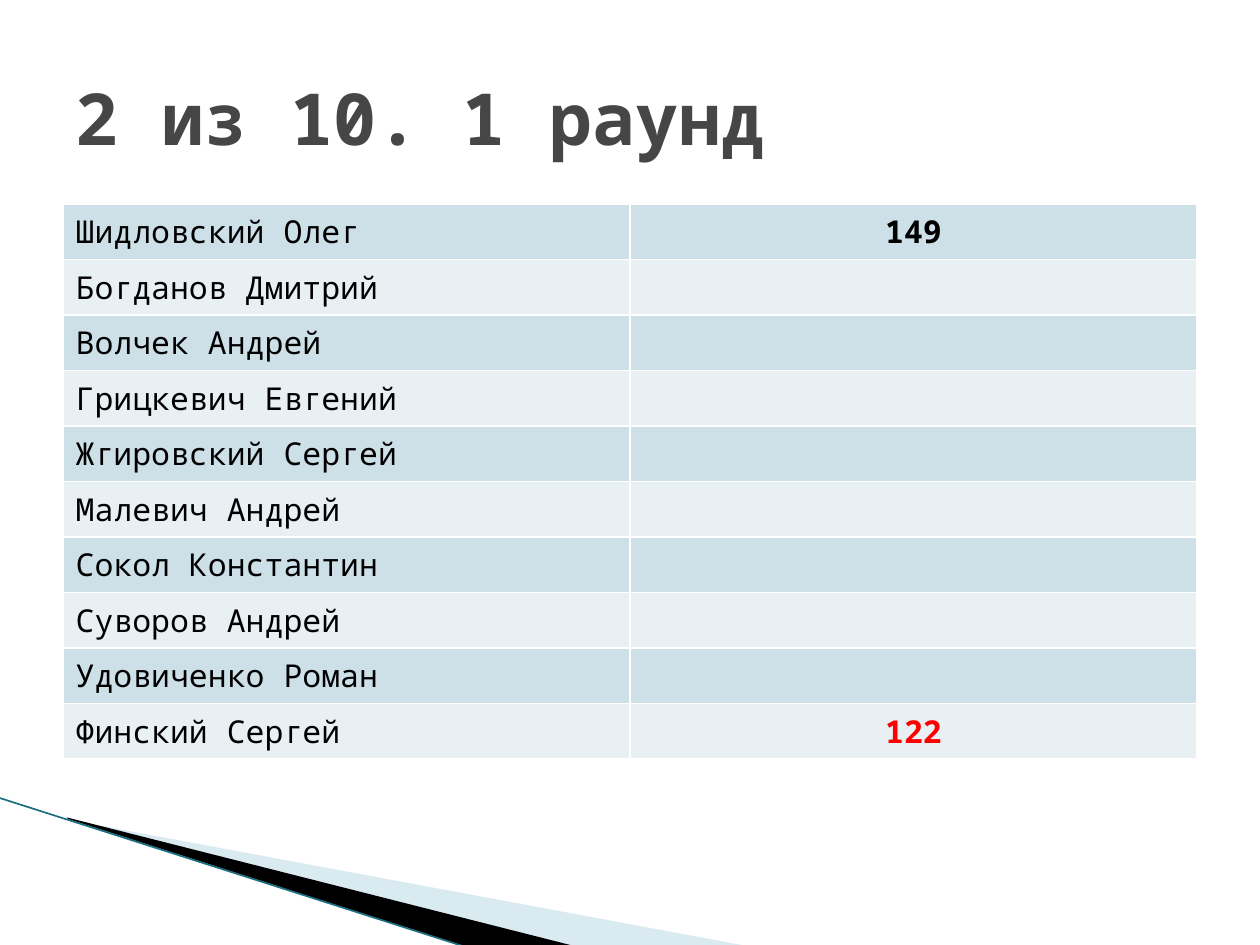
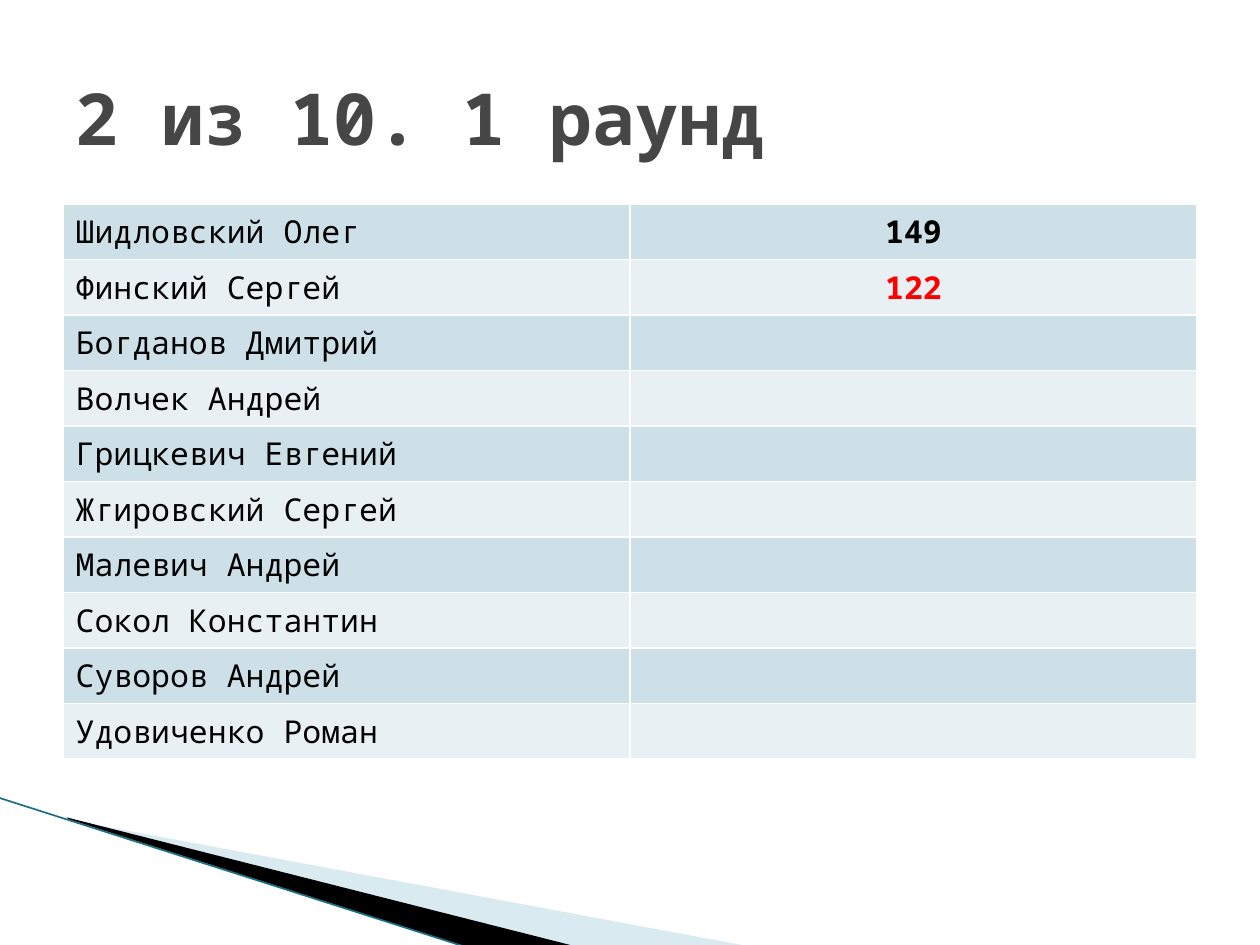
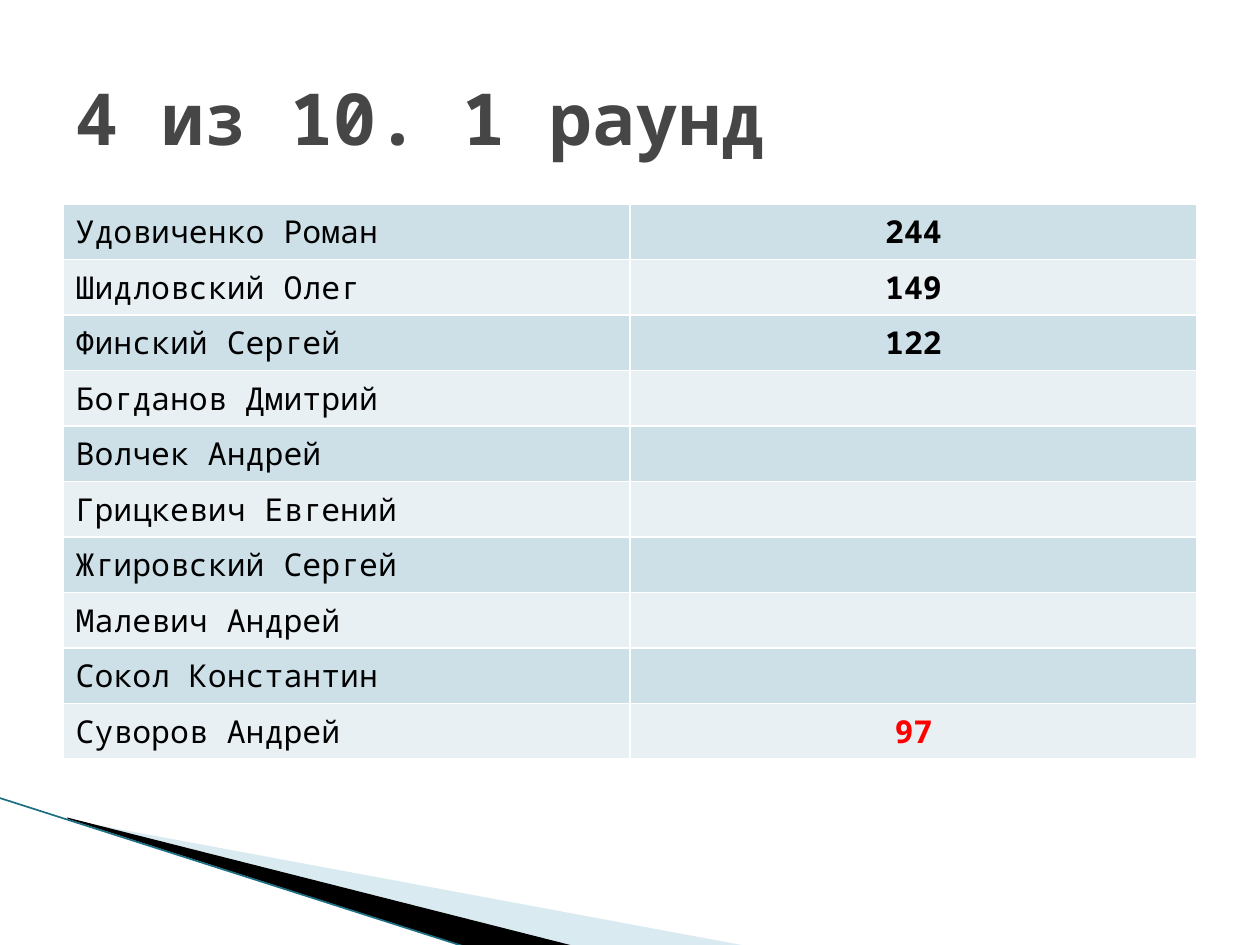
from lxml.etree import SubElement
from pptx import Presentation
from pptx.dml.color import RGBColor
from pptx.enum.shapes import MSO_CONNECTOR
from pptx.enum.text import MSO_ANCHOR, PP_ALIGN
from pptx.oxml.ns import qn
from pptx.util import Cm, Pt

PLAYERS = [
    "Богданов Дмитрий",
    "Волчек Андрей",
    "Грицкевич Евгений",
    "Жгировский Сергей",
    "Малевич Андрей",
    "Сокол Константин",
    "Суворов Андрей",
    "Удовиченко Роман",
    "Финский Сергей",
    "Шидловский Олег",
]
SCORES = {
    "Удовиченко Роман": "244",
    "Шидловский Олег": "149",
    "Финский Сергей": "122",
    "Суворов Андрей": "97",
}
ROUNDS = [
    {"title": "2 из 10. 1 раунд", "leaders": ["Шидловский Олег"], "latest": "Финский Сергей"},
    {
        "title": "2 из 10. 1 раунд",
        "leaders": ["Шидловский Олег", "Финский Сергей"],
        "latest": "Финский Сергей",
    },
    {
        "title": "4 из 10. 1 раунд",
        "leaders": ["Удовиченко Роман", "Шидловский Олег", "Финский Сергей"],
        "latest": "Суворов Андрей",
    },
]

FONT = "Noto Sans Mono"
WHITE, BLACK, RED, TITLE_GREY = "FFFFFF", "000000", "FF0000", "464646"
BAND_FILLS = ["CDE0E8", "E8F0F4"]
PALE_BLUE, TEAL = "A0CBDC", "1B6F83"

LEFT, WIDTH = 1.27, 22.86
TITLE_TOP, TITLE_HEIGHT = 0.76, 3.18
TABLE_TOP, ROW_HEIGHT = 4.11, 1.03
PALE_WEDGE = [(1.4, 16.53), (15.11, 19.08), (11.58, 19.08), (1.4, 16.51)]
BLACK_WEDGE = [(1.35, 16.48), (11.61, 19.08), (9.45, 19.1), (1.37, 16.51)]
EDGE = [(-0.03, 16.08), (9.42, 19.1)]


def color(value):
    return RGBColor.from_string(value)


def write(text_frame, text, size=18, fill=BLACK, bold=False, align=PP_ALIGN.LEFT):
    paragraph = text_frame.paragraphs[0]
    paragraph.alignment = align
    run = paragraph.add_run()
    run.text = text
    run.font.name = FONT
    run.font.size = Pt(size)
    run.font.bold = bold
    run.font.color.rgb = color(fill)


def add_wedge(slide, points, fill, opacity=100):
    corners = [(Cm(x), Cm(y)) for x, y in points]
    builder = slide.shapes.build_freeform(*corners[0], scale=1.0)
    builder.add_line_segments(corners[1:], close=True)
    wedge = builder.convert_to_shape()
    wedge.shadow.inherit = False
    wedge.line.fill.background()
    wedge.fill.solid()
    wedge.fill.fore_color.rgb = color(fill)
    if opacity < 100:
        solid_color = wedge.element.spPr.find(qn("a:solidFill"))[0]
        SubElement(solid_color, qn("a:alpha"), val=str(opacity * 1000))
    return wedge


def add_edge(slide):
    (x1, y1), (x2, y2) = EDGE
    edge = slide.shapes.add_connector(MSO_CONNECTOR.STRAIGHT, Cm(x1), Cm(y1), Cm(x2), Cm(y2))
    edge.line.color.rgb = color(TEAL)
    edge.line.width = Pt(0.95)
    SubElement(edge.element.spPr, qn("a:effectLst"))
    return edge


def decorate_layout(layout, slide):
    decorations = [
        add_wedge(slide, PALE_WEDGE, PALE_BLUE, opacity=40),
        add_wedge(slide, BLACK_WEDGE, BLACK),
        add_edge(slide),
    ]
    for decoration in decorations:
        layout.shapes.element.append(decoration.element)


def add_title(slide, text):
    title = slide.shapes.title
    title.left, title.top = Cm(LEFT), Cm(TITLE_TOP)
    title.width, title.height = Cm(WIDTH), Cm(TITLE_HEIGHT)
    title.text_frame.vertical_anchor = MSO_ANCHOR.MIDDLE
    write(title.text_frame, text, size=41, fill=TITLE_GREY, bold=True)


def format_cell(cell, fill):
    properties = cell._tc.get_or_add_tcPr()
    for side in ("a:lnL", "a:lnR", "a:lnT", "a:lnB"):
        border = SubElement(properties, qn(side), w=str(Pt(1)))
        solid = SubElement(border, qn("a:solidFill"))
        SubElement(solid, qn("a:srgbClr"), val=WHITE)
    cell.fill.solid()
    cell.fill.fore_color.rgb = color(fill)


def add_standings(slide, leaders, latest):
    names = leaders + [name for name in PLAYERS if name not in leaders]
    frame = slide.shapes.add_table(
        len(names), 2, Cm(LEFT), Cm(TABLE_TOP), Cm(WIDTH), Cm(ROW_HEIGHT * len(names))
    )
    table = frame.table
    table.first_row = False
    table.horz_banding = False
    for index, name in enumerate(names):
        name_cell, score_cell = table.cell(index, 0), table.cell(index, 1)
        for cell in (name_cell, score_cell):
            format_cell(cell, BAND_FILLS[index % 2])
        write(name_cell.text_frame, name)
        if name in leaders or name == latest:
            score_color = RED if name == latest else BLACK
            write(score_cell.text_frame, SCORES[name], fill=score_color, bold=True,
                  align=PP_ALIGN.CENTER)


def main():
    presentation = Presentation()
    presentation.slide_width, presentation.slide_height = Cm(25.4), Cm(19.05)
    layout = presentation.slide_layouts.get_by_name("Title Only")
    for index, game_round in enumerate(ROUNDS):
        slide = presentation.slides.add_slide(layout)
        if index == 0:
            decorate_layout(layout, slide)
        add_title(slide, game_round["title"])
        add_standings(slide, game_round["leaders"], game_round["latest"])
    presentation.save("out.pptx")


if __name__ == "__main__":
    main()
